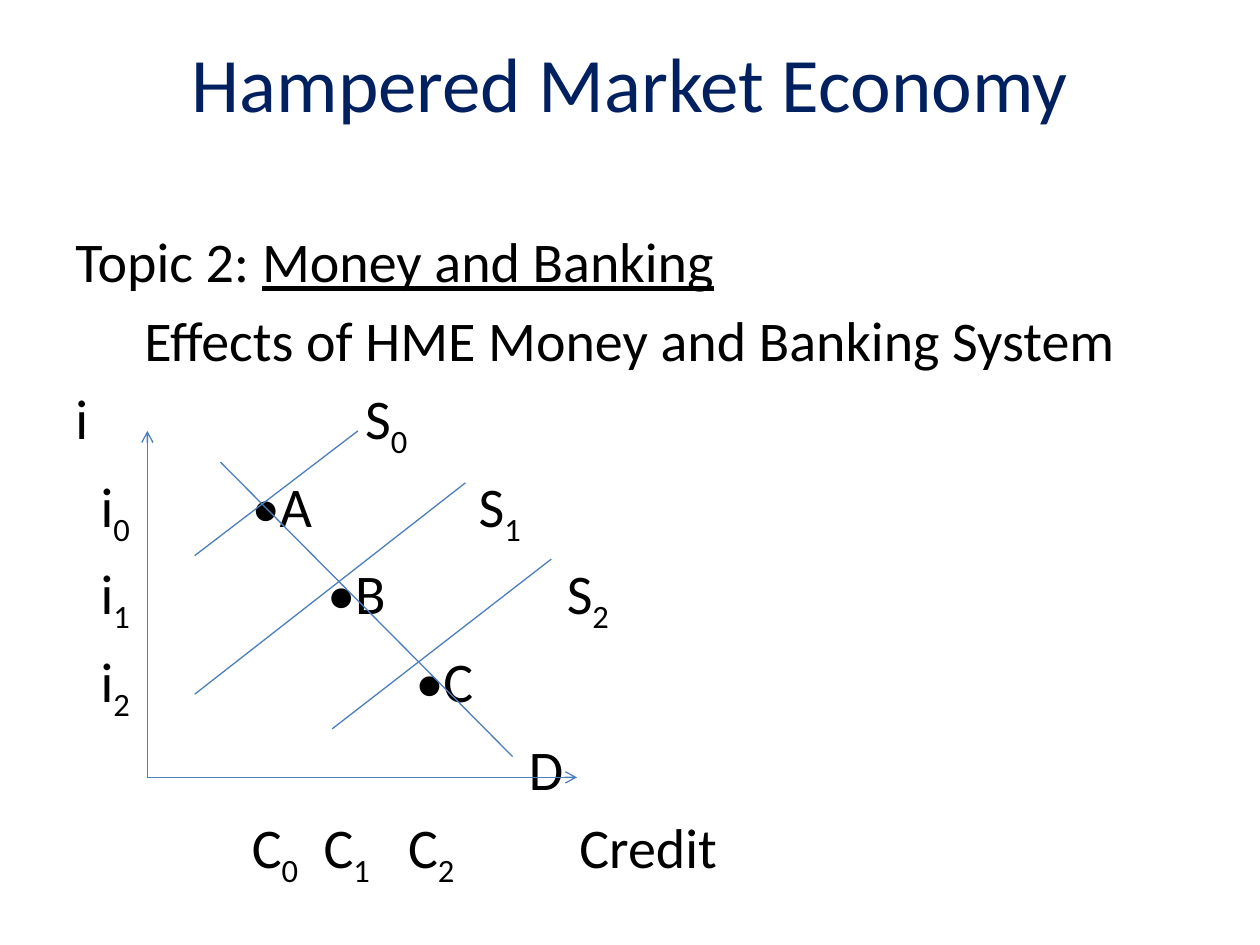
from pptx import Presentation
from pptx.dml.color import RGBColor
from pptx.enum.shapes import MSO_CONNECTOR as CONN
from pptx.enum.text import MSO_ANCHOR as ANCHOR, PP_ALIGN as ALIGN
from pptx.oxml.ns import qn
from pptx.util import Inches, Pt
from lxml.etree import SubElement

NAVY = RGBColor(0x00, 0x20, 0x60)
BLACK = RGBColor(0x00, 0x00, 0x00)
BLUE = RGBColor(0x4B, 0x7E, 0xBC)
FONT = "Calibri"

TITLE_BOX = (0, 0.02, 10, 1.25)
BODY_BOX = (0.5, 1.75, 9, 5.75)
GRAPH_BOX = (1.17, 3.42, 3.41, 2.75)

LABEL_ROWS = [
    ("i\tS_0", [2.3]),
    ("\ti_0\t•A\tS_1", [0.2, 1.4, 3.2]),
    ("\ti_1\t•B\tS_2", [0.2, 2, 3.9]),
    ("\ti_2\t•C", [0.2, 2.7]),
    ("\tD", [3.6]),
    ("\tC_0\tC_1\tC_2\tCredit", [1.4, 1.97, 2.64, 4]),
]
AXES = [(0, 1, 0, 0), (0, 1, 1, 1)]
CURVES = [
    (0.17, 0.09, 0.85, 0.94),
    (0.11, 0.36, 0.49, 0),
    (0.11, 0.76, 0.74, 0.15),
    (0.43, 0.86, 0.94, 0.37),
]


def add_run(p, text, size=32, color=BLACK, underline=None, sub=False):
    r = p.add_run()
    r.text = text
    r.font.name, r.font.size = FONT, Pt(size)
    r.font.color.rgb = color
    r.font.underline = underline
    if sub:
        r.font._element.set("baseline", "-25000")


def add_marked(p, text):
    first, *rest = text.split("_")
    add_run(p, first)
    for part in rest:
        add_run(p, part[0], sub=True)
        if part[1:]:
            add_run(p, part[1:])


def set_tabs(p, stops):
    tabs = SubElement(p._p.get_or_add_pPr(), qn("a:tabLst"))
    for stop in stops:
        SubElement(tabs, qn("a:tab"), pos=str(Inches(stop)), algn="l")


def add_title(s, box):
    sp = s.shapes.title
    sp.left, sp.top, sp.width, sp.height = map(Inches, box)
    tf = sp.text_frame
    tf.vertical_anchor = ANCHOR.MIDDLE
    p = tf.paragraphs[0]
    p.alignment = ALIGN.CENTER
    add_run(p, "Hampered Market Economy", size=44, color=NAVY)


def add_body(s, box):
    tf = s.shapes.add_textbox(*map(Inches, box)).text_frame
    tf.word_wrap = True
    topic, heading = tf.paragraphs[0], tf.add_paragraph()
    add_run(topic, "Topic 2: ")
    add_run(topic, "Money and Banking", underline=True)
    heading.alignment = ALIGN.CENTER
    add_run(heading, "Effects of HME Money and Banking System")
    for p in (topic, heading):
        p.space_before = Pt(6.4)
    for text, stops in LABEL_ROWS:
        p = tf.add_paragraph()
        p.space_before = Pt(6.4)
        set_tabs(p, stops)
        add_marked(p, text)


def add_line(s, box, ends, arrow=False):
    left, top, width, height = box
    x1, y1, x2, y2 = ends
    points = (left + x1 * width, top + y1 * height,
              left + x2 * width, top + y2 * height)
    line = s.shapes.add_connector(CONN.STRAIGHT, *map(Inches, points))
    line.line.color.rgb = BLUE
    line.line.width = Pt(0.75)
    if arrow:
        SubElement(line.line._get_or_add_ln(), qn("a:tailEnd"), type="arrow")
    SubElement(line._element.spPr, qn("a:effectLst"))


def add_graph(s, box):
    for ends in AXES:
        add_line(s, box, ends, arrow=True)
    for ends in CURVES:
        add_line(s, box, ends)


def main():
    prs = Presentation()
    prs.slide_width, prs.slide_height = Inches(10), Inches(7.5)
    s = prs.slides.add_slide(prs.slide_layouts[5])
    add_title(s, TITLE_BOX)
    add_body(s, BODY_BOX)
    add_graph(s, GRAPH_BOX)
    prs.save("out.pptx")


if __name__ == "__main__":
    main()
